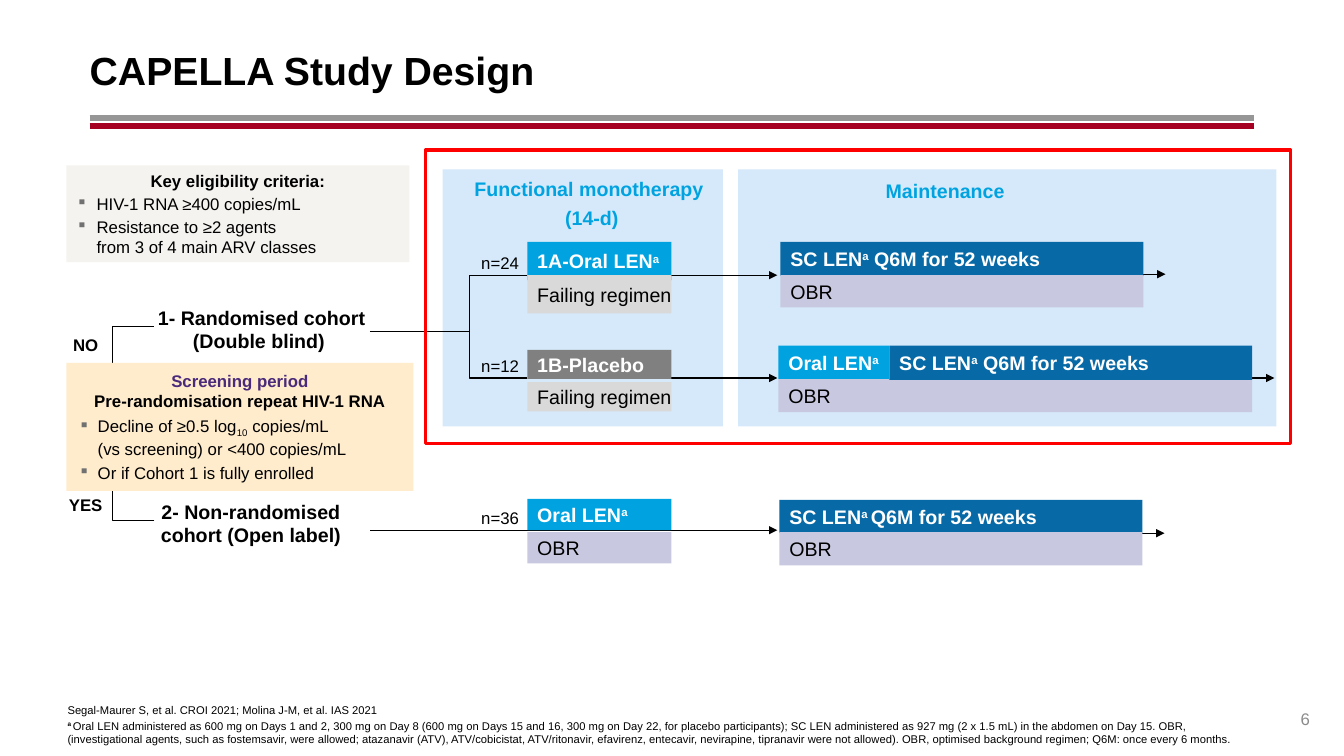
import copy

import pptx
import pptx.dml.color
import pptx.enum.shapes
import pptx.enum.text
import pptx.oxml
import pptx.oxml.ns
import pptx.util

SHAPES = pptx.enum.shapes.MSO_SHAPE
ANCHOR = pptx.enum.text.MSO_ANCHOR
ALIGN = pptx.enum.text.PP_ALIGN
CELL = 0.1

BLACK, WHITE = "000000", "FFFFFF"
PANEL, NAVY, CYAN = "D5E9FA", "0769A5", "00A3E0"
LILAC, SILVER, GREY = "C8C9E1", "D9D9D9", "808080"
LONG_ACTING = "SC LEN^a^ Q6M for 52 weeks"


def color(value):
    return pptx.dml.color.RGBColor.from_string(value)


def grid(cells):
    return pptx.util.Inches(cells * CELL)


def assign(target, values):
    for name, value in values.items():
        setattr(target, name, value)


class StudySlide:
    font = {"name": "Arial", "size": 14, "bold": False, "color": BLACK}

    def __init__(self, presentation):
        self.slide = presentation.slides.add_slide(presentation.slide_layouts[6])

    def box(self, area, fill=None, outline=None, width=0.75, kind=SHAPES.RECTANGLE):
        shape = self.slide.shapes.add_shape(kind, *map(grid, area))
        shape.shadow.inherit = False
        if fill:
            shape.fill.solid()
            shape.fill.fore_color.rgb = color(fill)
        else:
            shape.fill.background()
        if outline:
            shape.line.color.rgb = color(outline)
            shape.line.width = pptx.util.Pt(width)
        else:
            shape.line.fill.background()
        return shape

    def bracket(self, area):
        self.box(area, outline=BLACK, kind=SHAPES.LEFT_BRACKET).adjustments[0] = 0

    def line(self, left, right, row, stroke=BLACK, width=0.75, arrow=False):
        connector = self.slide.shapes.add_connector(
            pptx.enum.shapes.MSO_CONNECTOR.STRAIGHT,
            grid(left), grid(row), grid(right), grid(row))
        connector.line.color.rgb = color(stroke)
        connector.line.width = pptx.util.Pt(width)
        properties = connector._element.spPr
        if arrow:
            outline = properties.find(pptx.oxml.ns.qn("a:ln"))
            outline.append(self.element('<a:tailEnd {} type="triangle"/>'))
        properties.append(self.element("<a:effectLst {}/>"))

    def element(self, template):
        return pptx.oxml.parse_xml(template.format(pptx.oxml.ns.nsdecls("a")))

    def label(self, area, paragraphs, **layout):
        shape = self.slide.shapes.add_textbox(*map(grid, area))
        self.compose(shape, paragraphs, **layout)

    def panel(self, area, fill, paragraphs, **layout):
        self.compose(self.box(area, fill), paragraphs, **layout)

    def compose(self, shape, paragraphs, anchor=ANCHOR.MIDDLE, wrap=True, insets=(1, 0.5, 1, 0.5)):
        frame = shape.text_frame
        sides = ("margin_left", "margin_top", "margin_right", "margin_bottom")
        assign(frame, {"word_wrap": wrap, "vertical_anchor": anchor,
                       **dict(zip(sides, map(grid, insets)))})
        for index, (text, style) in enumerate(paragraphs):
            paragraph = frame.add_paragraph() if index else frame.paragraphs[0]
            self.fill_paragraph(paragraph, text, **style)

    def fill_paragraph(self, paragraph, text, align=ALIGN.LEFT, before=0, after=0,
                       indent=None, baseline=30000, **font):
        assign(paragraph, {"alignment": align, "space_before": pptx.util.Pt(before),
                           "space_after": pptx.util.Pt(after)})
        if indent:
            properties = paragraph._p.get_or_add_pPr()
            margin, hanging = map(grid, indent)
            properties.set("marL", str(margin))
            properties.set("indent", str(-hanging))
            for template in ('<a:buClr {}><a:srgbClr val="717171"/></a:buClr>',
                             '<a:buSzPct {} val="90000"/>', '<a:buChar {} char="▪"/>'):
                properties.append(self.element(template))
        for number, line in enumerate(text.split("\n")):
            if number:
                paragraph.add_line_break()
            for position, part in enumerate(line.split("^")):
                if part:
                    self.add_run(paragraph, part, font, baseline if position % 2 else 0)
        run_properties = paragraph.runs[-1]._r.rPr
        for line_break in paragraph._p.findall(pptx.oxml.ns.qn("a:br")):
            line_break.append(copy.deepcopy(run_properties))

    def add_run(self, paragraph, text, font, baseline):
        values = {**self.font, **font}
        run = paragraph.add_run()
        run.text = text
        run.font.color.rgb = color(values.pop("color"))
        values["size"] = pptx.util.Pt(values["size"])
        if baseline > 0:
            values["bold"] = True
        assign(run.font, values)
        if baseline:
            run._r.rPr.set("baseline", str(baseline))


def main():
    presentation = pptx.Presentation()
    assign(presentation, {"slide_width": pptx.util.Inches(13.33),
                          "slide_height": pptx.util.Inches(7.5)})
    study = StudySlide(presentation)
    small = {"size": 12}
    centred = {"align": ALIGN.CENTER}
    strong = {"bold": True, "color": WHITE}
    heading = {**centred, "bold": True, "color": CYAN, "after": 3.5}
    cohort = {**centred, "bold": True}
    tight = (0, 0, 0, 0)
    flush = (0, 0.5, 0, 0.5)
    left_flush = (0, 0.5, 1, 0.5)

    for row, stroke in ((11.7, "969696"), (12.5, "A50021")):
        study.line(8.9, 124.4, row, stroke, 4.25)
    for left, width in ((43.9, 27.8), (73.2, 53.4)):
        study.box((left, 16.8, width, 25.5), PANEL)

    for left, right, row in ((55.4, 77.1, 37.5), (55.4, 77.1, 27.3), (106.2, 115.6, 27.2),
                             (117, 126.4, 37.5), (36.7, 77.1, 52.6), (106.1, 115.5, 52.9)):
        study.line(left, right, row, arrow=True)
    study.line(36.7, 46.6, 32.9)

    for row, count in ((25.5, 24), (35.7, 12), (50.8, 36)):
        study.label((47, row, 5.2, 1.6), [(f"n={count}", {**centred, **small})],
                    anchor=ANCHOR.BOTTOM, insets=tight)

    for left, top, width, height, fill, text in (
            (77.4, 24, 36, 3.4, NAVY, LONG_ACTING),
            (77.4, 27.3, 36, 3.2, LILAC, "OBR"),
            (77.2, 37.6, 47, 3.3, LILAC, "OBR"),
            (88.2, 34.3, 36, 3.4, NAVY, LONG_ACTING),
            (77.2, 34.3, 11, 3.3, CYAN, "Oral LEN^a^"),
            (77.3, 49.6, 36, 3.3, NAVY, "SC LEN^a ^Q6M for 52 weeks"),
            (77.3, 52.8, 36, 3.3, LILAC, "OBR"),
            (52.3, 24, 14.3, 3.8, CYAN, "1A-Oral LEN^a^"),
            (52.3, 27.3, 14.3, 3.8, SILVER, "Failing regimen"),
            (52.3, 37.9, 14.3, 2.9, SILVER, "Failing regimen"),
            (52.3, 34.7, 14.3, 2.9, GREY, "1B-Placebo"),
            (52.3, 49.5, 14.3, 3.1, CYAN, "Oral LEN^a^"),
            (52.3, 52.8, 14.3, 3.1, LILAC, "OBR")):
        style = strong if fill in (NAVY, CYAN, GREY) else {}
        study.panel((left, top, width, height), fill, [(text, style)], wrap=False)

    study.label((15, 30.3, 21.9, 4.7),
                [("1- Randomised cohort", cohort), ("(Double blind) ", cohort)], insets=tight)
    study.panel((13.1, 48.6, 23.6, 6.6), WHITE,
                [("2- Non-randomised cohort (Open label)", cohort)], insets=tight)
    study.bracket((46.6, 27.3, 5.7, 10.2))
    study.bracket((11.2, 32.4, 4.1, 19.2))

    for area, lines in (((44.6, 17, 28.2, 6.3), ("Functional monotherapy ", "(14-d)")),
                        ((78.1, 17.2, 31.3, 3.4), ("Maintenance",))):
        study.label(area, [(text, heading) for text in lines], insets=flush)

    criterion = {**small, "before": 2, "indent": (2, 2)}
    study.panel((6.6, 16.4, 34, 9.6), "F5F3EF", [
        ("Key eligibility criteria:", {**cohort, **small}),
        ("HIV-1 RNA ≥400 copies/mL", criterion),
        ("Resistance to ≥2 agents \nfrom 3 of 4 main ARV classes", criterion)])
    outcome = {**small, "before": 3, "indent": (3.1, 1.9)}
    study.panel((6.6, 36, 34.4, 12.7), "FFECCD", [
        ("Screening period", {**cohort, **small, "color": "4A2A7A"}),
        ("Pre-randomisation repeat HIV-1 RNA", {**cohort, **small}),
        ("Decline of ≥0.5 log^10^ copies/mL \n(vs screening) or <400 copies/mL",
         {**outcome, "baseline": -25000}),
        ("Or if Cohort 1 is fully enrolled", outcome)], insets=flush)
    for row, answer in ((32.7, "NO"), (48.6, "YES")):
        study.label((5.3, row, 6.4, 3), [(answer, {**cohort, **small})], anchor=ANCHOR.BOTTOM)

    study.panel((8.9, 2.6, 90.4, 8.6), WHITE,
                [("CAPELLA Study Design", {"size": 28, "bold": True})], insets=left_flush)
    study.box((42.2, 14.9, 85.8, 29.1), outline="FF0000", width=2.5)

    study.label((6.7, 66.8, 117.6, 7.7), [
        ("Segal-Maurer S, et al. CROI 2021; Molina J-M, et al. IAS 2021", {"size": 8}),
        ("^a ^Oral LEN administered as 600 mg on Days 1 and 2, 300 mg on Day 8 "
         "(600 mg on Days 15 and 16, 300 mg on Day 22, for placebo participants); "
         "SC LEN administered as 927 mg (2 x 1.5 mL) in the abdomen on Day 15. OBR, "
         "(investigational agents, such as fostemsavir, were allowed; atazanavir (ATV), "
         "ATV/cobicistat, ATV/ritonavir, efavirenz, entecavir, nevirapine, tipranavir "
         "were not allowed). OBR, optimised background regimen; Q6M: once every 6 months.",
         {"size": 8, "before": 1.6})], anchor=ANCHOR.BOTTOM, insets=left_flush)
    study.label((124.4, 69.3, 6.5, 4),
                [("6", {**small, "align": ALIGN.RIGHT, "color": "8C8C8C"})])
    presentation.save("out.pptx")


if __name__ == "__main__":
    main()
